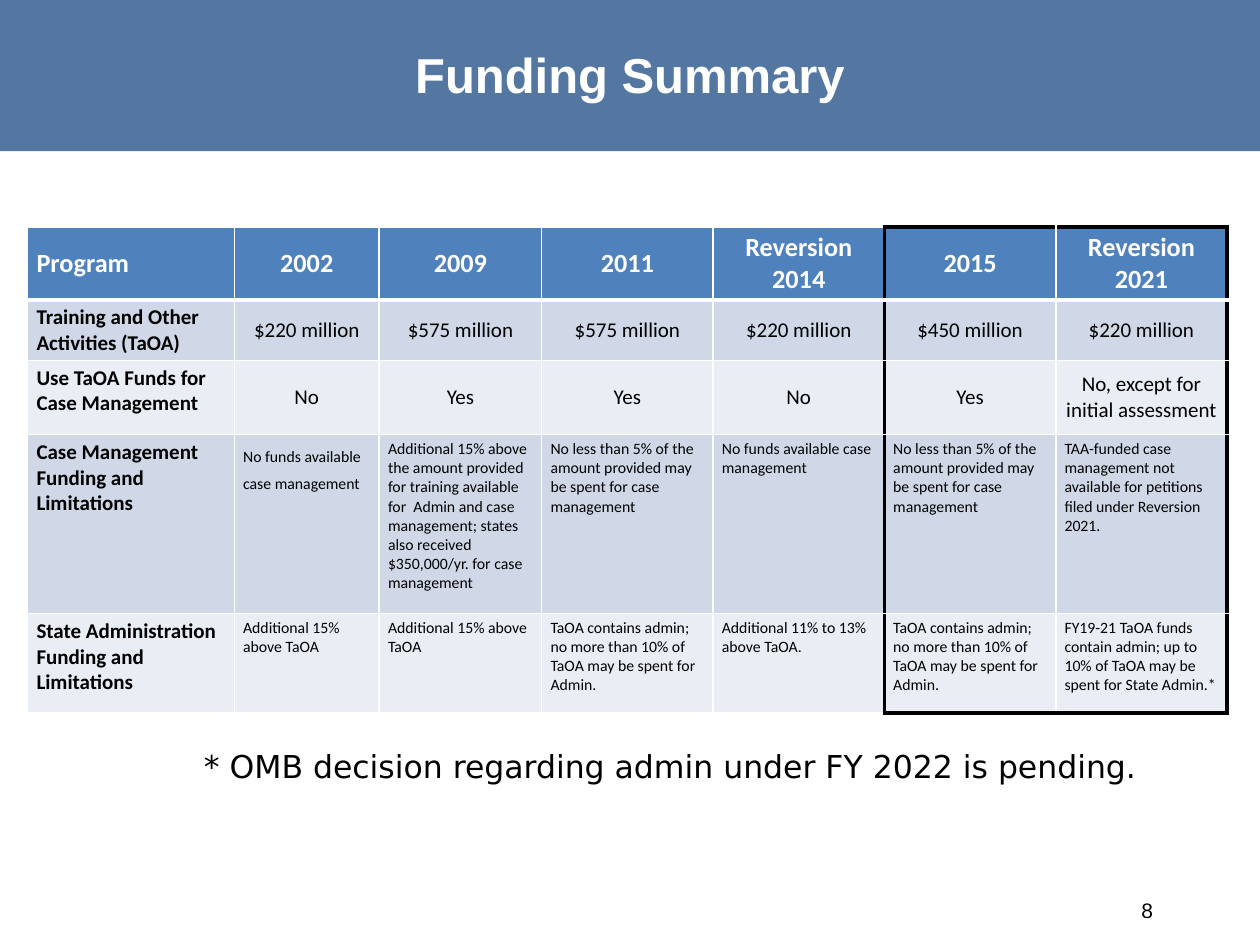
from pptx import Presentation
from pptx import util as u
from pptx.dml.color import RGBColor
from pptx.enum import shapes, text
from pptx.oxml import parse_xml
from pptx.oxml.ns import nsdecls, qn
from lxml import etree

COLUMN_WIDTHS = [1.64, 1.15, 1.29] + [1.36] * 4
ROW_HEIGHTS = [0.57, 0.47, 0.59, 1.42, 0.79]
ROW_FILLS = ["4F81BD", "D0D8E8", "E9EDF4", "D0D8E8", "E9EDF4"]
BODY_SIZES = [15, 12, 12, 9, 9]
FRAME_START = 5
FIVE_PERCENT = "No less than 5% of the amount provided may be spent for case management"
TEN_PERCENT = "TaOA contains admin; no more than 10% of TaOA may be spent for Admin."
NO_FUNDS = "No funds available case management"
ROWS = [
    ["Program", "2002", "2009", "2011", "Reversion 2014", "2015", "Reversion 2021"],
    ["Training and Other Activities (TaOA)", "$220 million", "$575 million",
     "$575 million", "$220 million", "$450 million", "$220 million"],
    ["Use TaOA Funds for Case Management", "No", "Yes", "Yes", "No", "Yes",
     "No, except for initial assessment"],
    ["Case Management Funding and Limitations", NO_FUNDS,
     "Additional 15% above the amount provided for training available for  Admin and "
     "case management; states also received $350,000/yr. for case management",
     FIVE_PERCENT, NO_FUNDS, FIVE_PERCENT,
     "TAA-funded case management not available for petitions filed under Reversion 2021."],
    ["State Administration Funding and Limitations", "Additional 15% above TaOA",
     "Additional 15% above TaOA", TEN_PERCENT, "Additional 11% to 13% above TaOA.",
     TEN_PERCENT,
     "FY19-21 TaOA funds contain admin; up to 10% of TaOA may be spent for State Admin.*"],
]


def color(value):
    """Return the colour for a hex string."""
    return RGBColor.from_string(value)


def write(frame, words, size, font, fill="000000", bold=False, align=text.PP_ALIGN.LEFT):
    """Set the text of a frame and format its paragraph and run."""
    frame.text = words
    paragraph = frame.paragraphs[0]
    paragraph.alignment = align
    style = paragraph.runs[0].font
    style.size, style.name, style.bold = u.Pt(size), font, bold
    style.color.rgb = color(fill)
    return paragraph


def add_text(slide, box, words, size, font, wrap=True, anchor=text.MSO_ANCHOR.MIDDLE, **style):
    """Add a text box in the given box."""
    shape = slide.shapes.add_textbox(*map(u.Inches, box))
    frame = shape.text_frame
    frame.word_wrap = wrap
    frame.vertical_anchor = anchor
    write(frame, words, size, font, **style)


def add_header(slide, box, title):
    """Add the translucent band and its centred title."""
    band = slide.shapes.add_shape(shapes.MSO_SHAPE.RECTANGLE, *map(u.Inches, box))
    band.shadow.inherit = False
    band.fill.solid()
    band.fill.fore_color.rgb = color("376092")
    band.line.fill.background()
    tint = band.fill._xPr.find(".//" + qn("a:srgbClr"))
    etree.SubElement(tint, qn("a:alpha"), val="85000")
    add_text(slide, (0, 0, 10, 1.17), title, 28, "Arial", fill="FFFFFF", bold=True,
             align=text.PP_ALIGN.CENTER)


def set_borders(cell, row, column):
    """Draw white rules, a thick one under the header, and the black frame."""
    white, heavy, black = ("FFFFFF", 1), ("FFFFFF", 3), ("000000", 2.25)
    last_row, last_column = len(ROWS) - 1, len(COLUMN_WIDTHS) - 1
    framed = column >= FRAME_START
    borders = {
        "L": black if column == FRAME_START else white,
        "R": black if column in (FRAME_START - 1, last_column) else white,
        "T": black if framed and row == 0 else heavy if row == 1 else white,
        "B": black if framed and row == last_row else heavy if row == 0 else white,
    }
    properties = cell._tc.get_or_add_tcPr()
    for index, (side, (value, width)) in enumerate(borders.items()):
        properties.insert(index, parse_xml(
            f'<a:ln{side} {nsdecls("a")} w="{u.Pt(width)}"><a:solidFill>'
            f'<a:srgbClr val="{value}"/></a:solidFill></a:ln{side}>'))


def fill_cell(cell, row, column):
    """Write and style one cell of the funding table."""
    header, label = row == 0, column == 0
    cell.margin_left = cell.margin_right = u.Inches(0.07)
    cell.margin_top = cell.margin_bottom = u.Inches(0.04)
    centered = not label and row < 3
    cell.vertical_anchor = (text.MSO_ANCHOR.MIDDLE if header or centered
                            else text.MSO_ANCHOR.TOP)
    paragraph = write(cell.text_frame, ROWS[row][column],
                      12 if label and not header else BODY_SIZES[row], "Calibri",
                      fill="FFFFFF" if header else "000000", bold=header or label,
                      align=text.PP_ALIGN.CENTER if centered else text.PP_ALIGN.LEFT)
    if (row, column) == (3, 1):
        paragraph.line_spacing = 1.4
    cell.fill.solid()
    cell.fill.fore_color.rgb = color(ROW_FILLS[row])
    set_borders(cell, row, column)


def add_funding_table(slide, box):
    """Add the table that compares funding by program."""
    table = slide.shapes.add_table(len(ROWS), len(COLUMN_WIDTHS),
                                   *map(u.Inches, box)).table
    for column, width in zip(table.columns, COLUMN_WIDTHS):
        column.width = u.Inches(width)
    for row, height in zip(table.rows, ROW_HEIGHTS):
        row.height = u.Inches(height)
    for row in range(len(ROWS)):
        for column in range(len(COLUMN_WIDTHS)):
            fill_cell(table.cell(row, column), row, column)


def main():
    """Build the funding summary slide."""
    presentation = Presentation()
    presentation.slide_width, presentation.slide_height = u.Inches(10), u.Inches(7.5)
    slide = presentation.slides.add_slide(presentation.slide_layouts[6])
    add_header(slide, (-0.01, 0, 10.01, 1.2), "Funding Summary")
    add_funding_table(slide, (0.22, 1.8, 9.53, 3.85))
    add_text(slide, (1.52, 5.88, 7.76, 0.4),
             "* OMB decision regarding admin under FY 2022 is pending.", 18,
             "DejaVu Sans", wrap=False, anchor=text.MSO_ANCHOR.TOP)
    add_text(slide, (6.92, 7.02, 2.33, 0.4), "8", 12, "Arial", align=text.PP_ALIGN.RIGHT)
    presentation.save("out.pptx")


if __name__ == "__main__":
    main()
